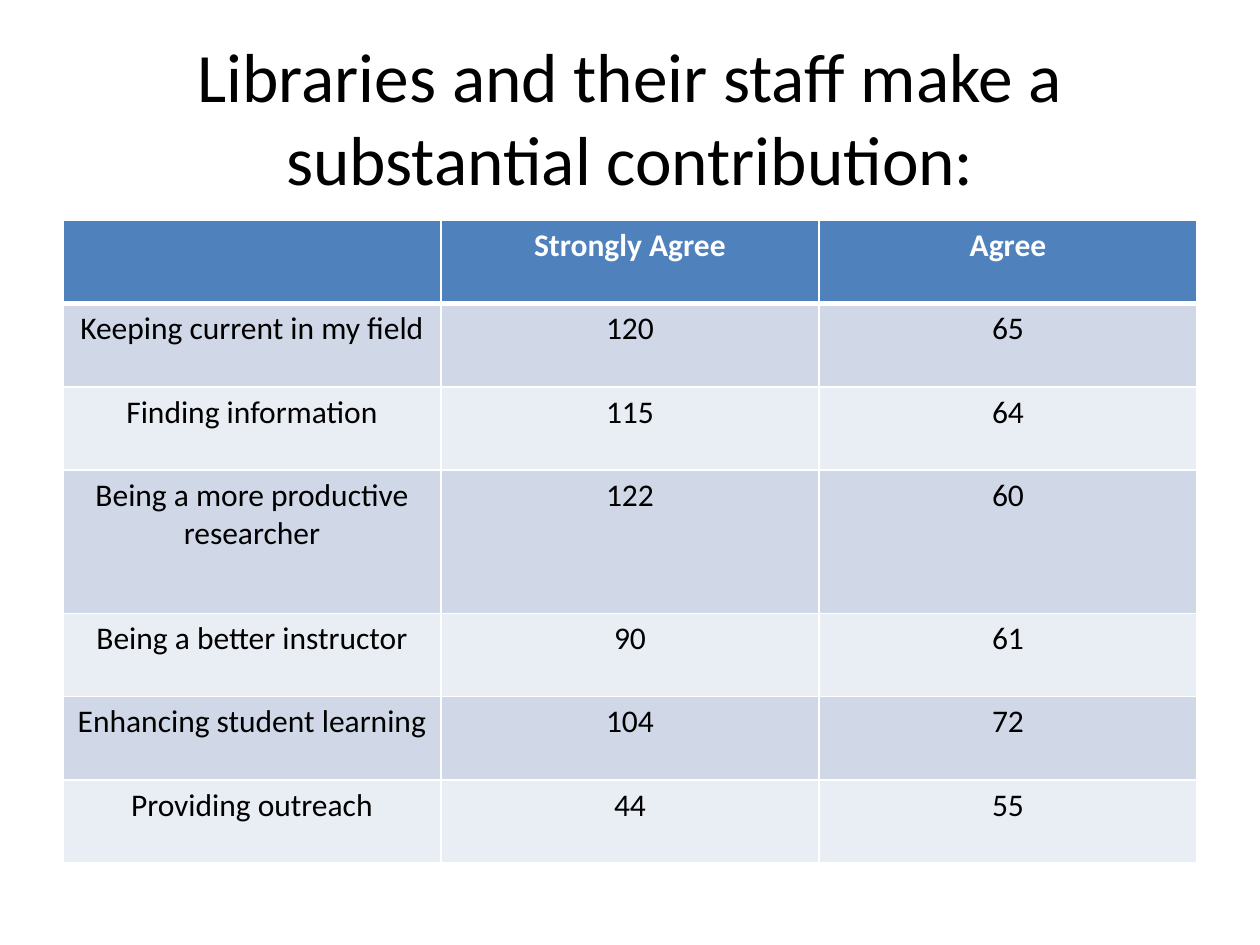
from lxml import etree
from pptx import Presentation
from pptx.dml.color import RGBColor
from pptx.enum.text import MSO_ANCHOR, PP_ALIGN
from pptx.oxml.ns import qn
from pptx.util import Inches, Pt

CENTER = PP_ALIGN.CENTER
MIDDLE = MSO_ANCHOR.MIDDLE
FONT = "Calibri"
COLORS = {
    "text": "000000",
    "white": "FFFFFF",
    "header": "4F81BD",
    "odd": "D0D8E8",
    "even": "E9EDF4",
}
TITLE = "Libraries and their staff make a substantial contribution:"
ROWS = [
    ("", "Strongly Agree", "Agree"),
    ("Keeping current in my field", "120", "65"),
    ("Finding information", "115", "64"),
    ("Being a more productive researcher", "122", "60"),
    ("Being a better instructor", "90", "61"),
    ("Enhancing student learning", "104", "72"),
    ("Providing outreach", "44", "55"),
]
ROW_HEIGHT = 0.66
TALL_ROW, TALL_HEIGHT = 3, 1.14


def rgb(name):
    """Return the named colour."""
    return RGBColor.from_string(COLORS[name])


def add_text(tf, text, size, color, bold=False):
    """Write one centred run into a text frame."""
    p = tf.paragraphs[0]
    p.alignment = CENTER
    r = p.add_run()
    r.text = text
    r.font.name = FONT
    r.font.size = Pt(size)
    r.font.bold = bold
    r.font.color.rgb = rgb(color)


def set_borders(cell, top, bottom):
    """Draw white cell borders with the given top and bottom widths."""
    tc_pr = cell._tc.get_or_add_tcPr()
    for side, width in (("L", 1), ("R", 1), ("T", top), ("B", bottom)):
        ln = etree.SubElement(tc_pr, qn(f"a:ln{side}"), w=str(Pt(width)))
        fill = etree.SubElement(ln, qn("a:solidFill"))
        etree.SubElement(fill, qn("a:srgbClr"), val=COLORS["white"])


def add_title(s, left, top, width, height):
    """Place the slide title in its box."""
    sp = s.shapes.add_textbox(Inches(left), Inches(top), Inches(width), Inches(height))
    tf = sp.text_frame
    tf.word_wrap = True
    tf.vertical_anchor = MIDDLE
    add_text(tf, TITLE, 39.6, "text")


def add_survey_table(s, left, top, width):
    """Place the table of survey answers, with equal columns."""
    heights = [TALL_HEIGHT if i == TALL_ROW else ROW_HEIGHT for i in range(len(ROWS))]
    cols = len(ROWS[0])
    table = s.shapes.add_table(
        len(ROWS), cols, Inches(left), Inches(top), Inches(width), Inches(sum(heights))
    ).table
    for col in table.columns:
        col.width = Inches(width / cols)
    for i, values in enumerate(ROWS):
        table.rows[i].height = Inches(heights[i])
        header = i == 0
        fill = "header" if header else "odd" if i % 2 else "even"
        for j, value in enumerate(values):
            cell = table.cell(i, j)
            set_borders(cell, 3 if i == 1 else 1, 3 if header else 1)
            cell.fill.solid()
            cell.fill.fore_color.rgb = rgb(fill)
            if value:
                add_text(cell.text_frame, value, 18, "white" if header else "text", header)


def main():
    """Build and save the slide."""
    prs = Presentation()
    prs.slide_width, prs.slide_height = Inches(10), Inches(7.5)
    s = prs.slides.add_slide(prs.slide_layouts[6])
    add_title(s, 0.5, 0.3, 9, 1.25)
    add_survey_table(s, 0.5, 1.75, 9)
    prs.save("out.pptx")


if __name__ == "__main__":
    main()
